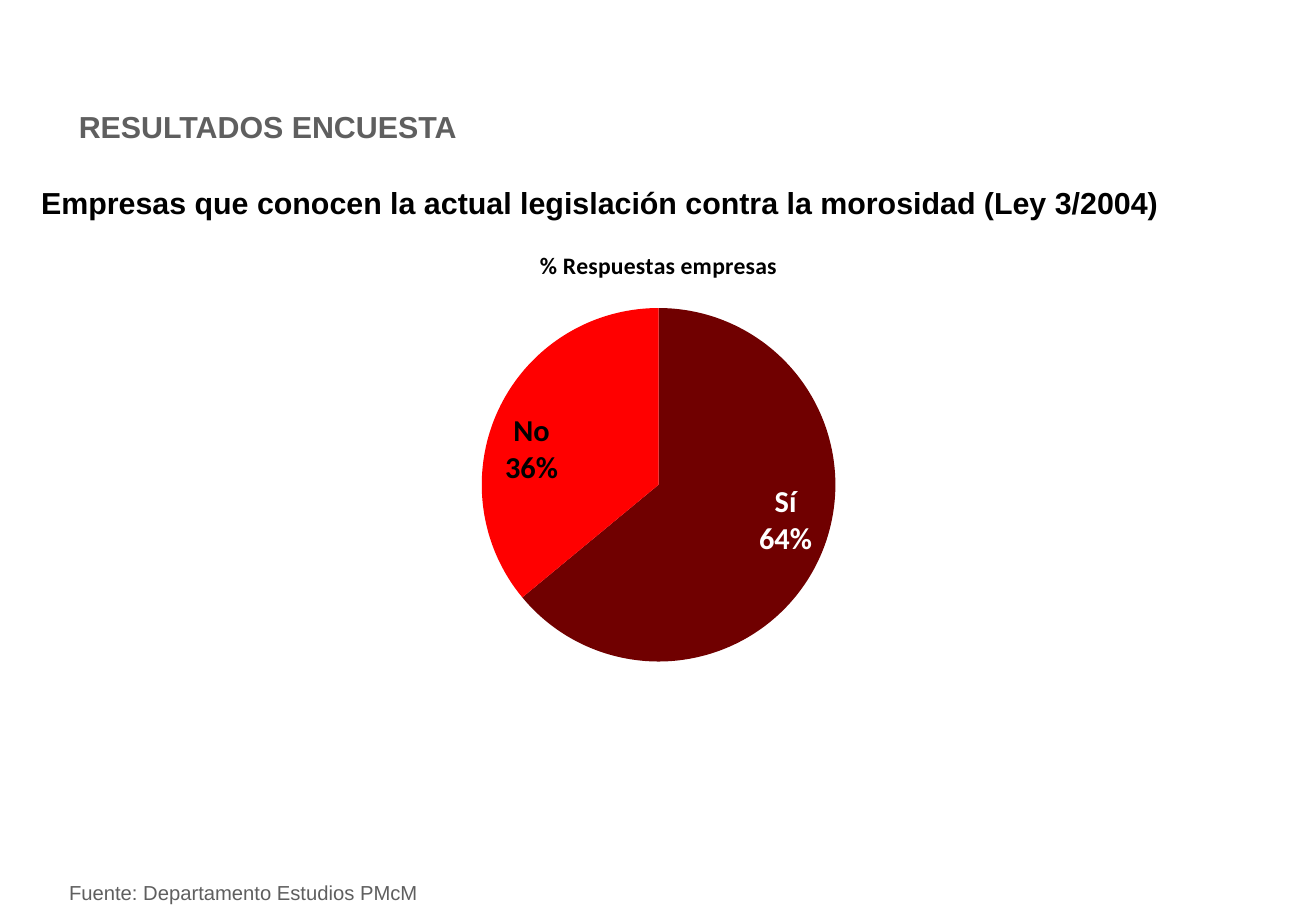
import pptx
import pptx.chart.data
import pptx.dml.color
import pptx.enum.chart
import pptx.enum.text
import pptx.oxml
import pptx.oxml.ns
import pptx.util

Inches = pptx.util.Inches
Color = pptx.dml.color.RGBColor
Anchor = pptx.enum.text.MSO_ANCHOR
qn = pptx.oxml.ns.qn

BLACK = Color(0, 0, 0)
WHITE = Color(255, 255, 255)
GRAY = Color(0x5F, 0x5F, 0x5F)
MAROON = Color(0x70, 0, 0)
RED = Color(255, 0, 0)


class Deck:
    text_font = "Arial"
    chart_font = "Calibri"

    def __init__(self, width, height):
        self.show = pptx.Presentation()
        self.show.slide_width = Inches(width)
        self.show.slide_height = Inches(height)
        self.slide = self.show.slides.add_slide(self.show.slide_layouts[6])

    def style(self, font, name, size, color, bold):
        font.name = name
        font.size = pptx.util.Pt(size)
        font.bold = bold
        font.color.rgb = color

    def text(self, box, words, size, color, bold=False, anchor=Anchor.TOP):
        frame = self.slide.shapes.add_textbox(*map(Inches, box)).text_frame
        frame.word_wrap = True
        frame.vertical_anchor = anchor
        frame.text = words
        run = frame.paragraphs[0].runs[0]
        self.style(run.font, self.text_font, size, color, bold)

    def pie(self, box, title, slices, area):
        """Draw slices of (name, value, fill, label colour); area is x, y, w, h as fractions."""
        data = pptx.chart.data.CategoryChartData(number_format="0%")
        data.categories = [item[0] for item in slices]
        data.add_series(title, [item[1] for item in slices])
        kind = pptx.enum.chart.XL_CHART_TYPE.PIE
        chart = self.slide.shapes.add_chart(kind, *map(Inches, box), data).chart
        self.style(chart.font, self.chart_font, 10, BLACK, False)
        chart.has_legend = False
        chart.has_title = True
        chart.chart_title.include_in_layout = False
        frame = chart.chart_title.text_frame
        frame.text = title
        self.style(frame.paragraphs[0].runs[0].font, self.chart_font, 14, BLACK, True)
        self.place(chart, area)
        plot = chart.plots[0]
        plot.vary_by_categories = True
        for index, (_, _, fill, ink) in enumerate(slices):
            point = plot.series[0].points[index]
            point.format.fill.solid()
            point.format.fill.fore_color.rgb = fill
            self.label(point.data_label, ink)

    def label(self, label, ink):
        """Show category and value on two lines inside the slice's edge."""
        self.style(label.font, self.chart_font, 18, ink, True)
        label.position = pptx.enum.chart.XL_LABEL_POSITION.INSIDE_END
        node = label.font._element.getparent()
        while node.tag != qn("c:dLbl"):
            node = node.getparent()
        for tag, flag in (("c:showVal", "1"), ("c:showCatName", "1"), ("c:showPercent", "0")):
            node.find(qn(tag)).set("val", flag)
        gap = pptx.oxml.parse_xml(f"<c:separator {pptx.oxml.ns.nsdecls('c')}>\n</c:separator>")
        node.find(qn("c:showBubbleSize")).addnext(gap)

    def place(self, chart, area):
        plot = chart._chartSpace.find(".//" + qn("c:plotArea"))
        for old in plot.findall(qn("c:layout")):
            plot.remove(old)
        modes = '<c:xMode val="edge"/><c:yMode val="edge"/>'
        sizes = "".join(f'<c:{key} val="{val}"/>' for key, val in zip("xywh", area))
        plot.insert(0, pptx.oxml.parse_xml(
            f"<c:layout {pptx.oxml.ns.nsdecls('c')}><c:manualLayout>"
            f'<c:layoutTarget val="inner"/>{modes}{sizes}</c:manualLayout></c:layout>'))


def main():
    deck = Deck(10.83, 7.5)
    deck.text((0.55, 0.84, 7.59, 0.4), "RESULTADOS ENCUESTA", 18, GRAY, True)
    deck.text((0.24, 1.47, 10.17, 0.71),
              "Empresas que conocen la actual legislación contra la morosidad (Ley 3/2004)",
              18, BLACK, True)
    deck.text((0.47, 7.2, 6.65, 0.3), "Fuente: Departamento Estudios PMcM",
              12, GRAY, anchor=Anchor.MIDDLE)
    deck.pie((1.59, 1.89, 7.66, 3.72), "% Respuestas empresas",
             [("Sí", 0.64, MAROON, WHITE), ("No", 0.36, RED, BLACK)],
             (0.31, 0.17, 0.38, 0.79))
    deck.show.save("out.pptx")


if __name__ == "__main__":
    main()
